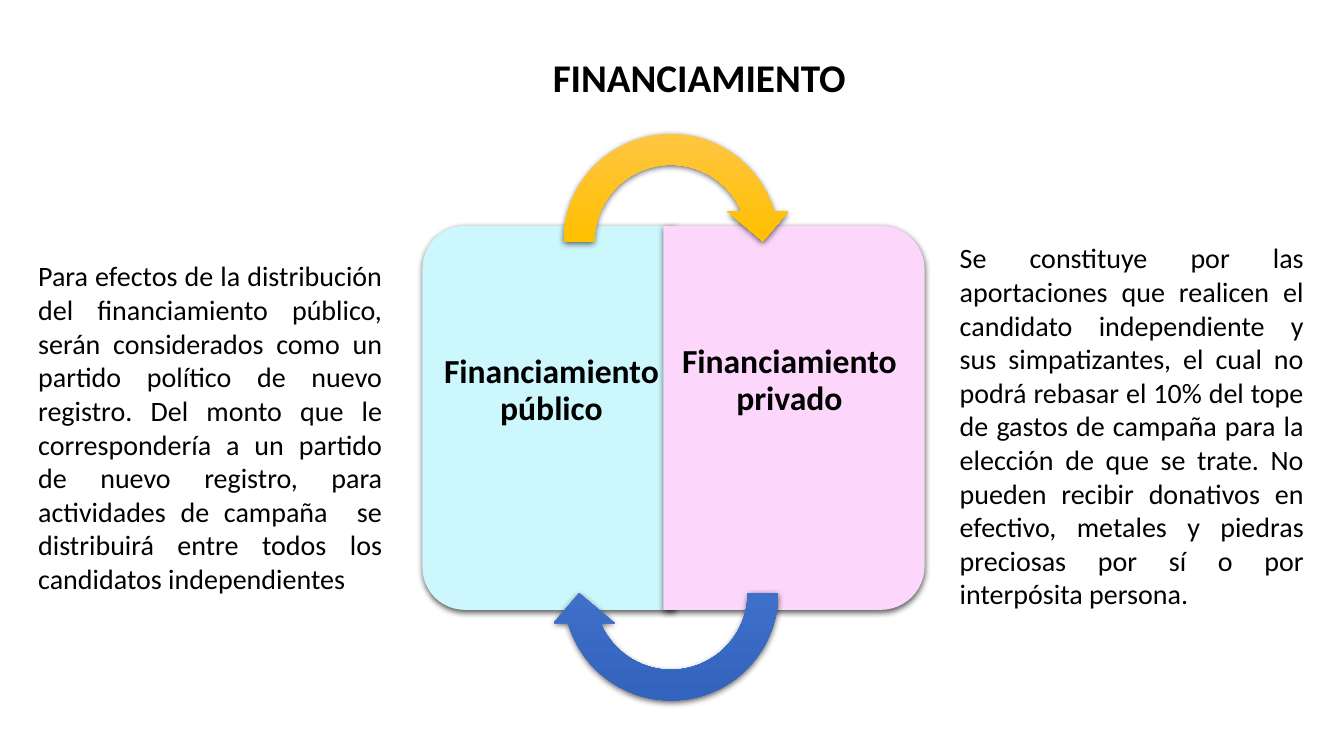
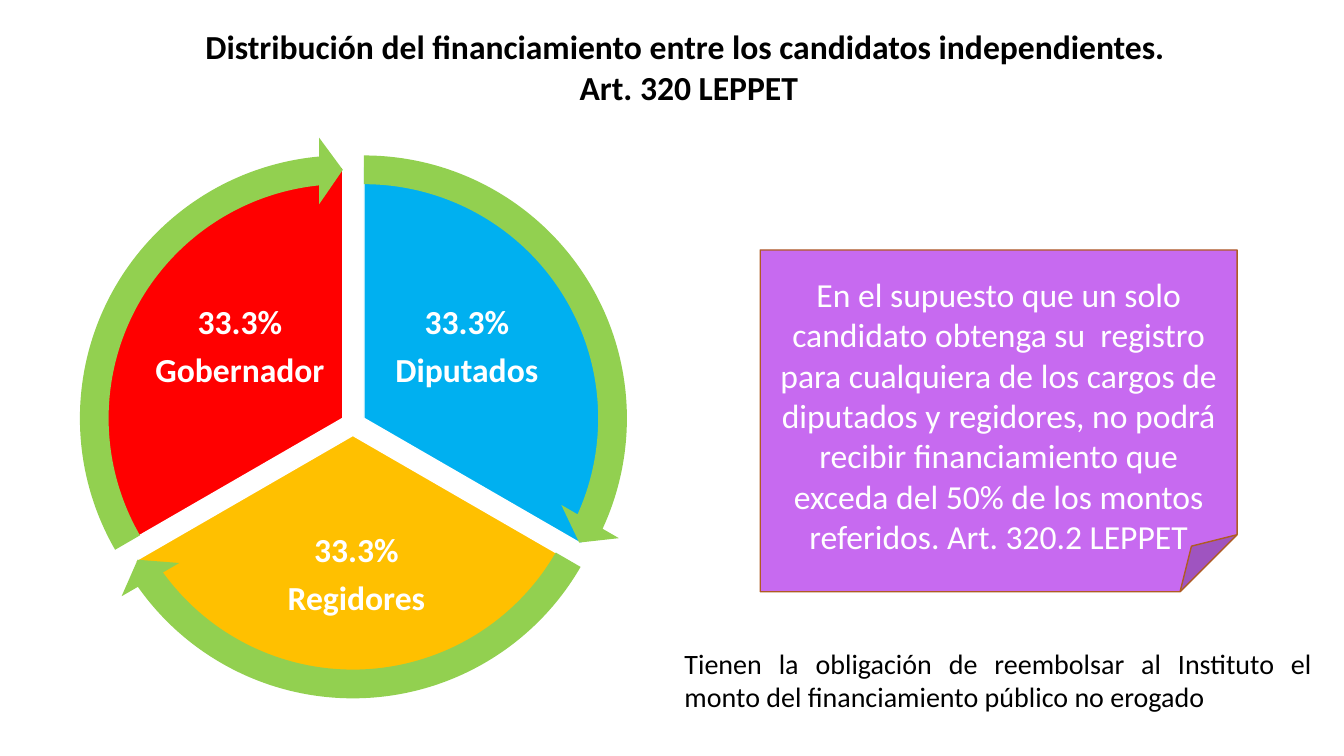
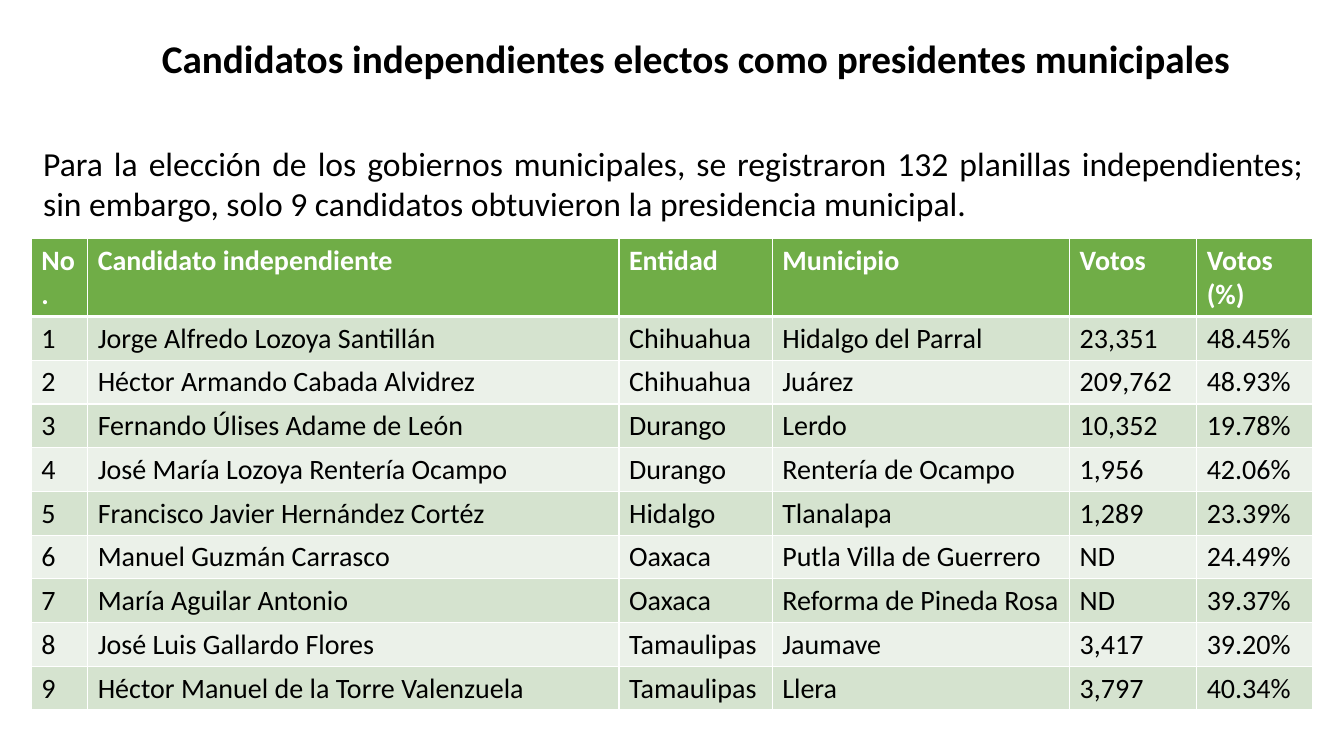
from dataclasses import dataclass

from lxml import etree
from pptx import Presentation
from pptx.dml.color import RGBColor
from pptx.enum.shapes import MSO_SHAPE
from pptx.enum.text import MSO_ANCHOR, MSO_AUTO_SIZE, PP_ALIGN
from pptx.oxml import parse_xml
from pptx.oxml.ns import qn
from pptx.util import Inches, Pt

CENTER, JUSTIFY, LEFT = PP_ALIGN.CENTER, PP_ALIGN.JUSTIFY, PP_ALIGN.LEFT
TOP, MIDDLE = MSO_ANCHOR.TOP, MSO_ANCHOR.MIDDLE
PIE, RING_ARROW = MSO_SHAPE.PIE, MSO_SHAPE.CIRCULAR_ARROW
CARD, NOTE = MSO_SHAPE.ROUND_2_SAME_RECTANGLE, MSO_SHAPE.FOLDED_CORNER
A_NS = 'xmlns:a="http://schemas.openxmlformats.org/drawingml/2006/main"'


@dataclass(frozen=True)
class Theme:
    font: str = "Calibri"
    black: str = "000000"
    white: str = "FFFFFF"
    cyan: str = "CBF7FD"
    pink: str = "FDD7FB"
    gold: tuple = ("FFC64B", "FFC000", "E3AB00")
    navy: tuple = ("6183CB", "3E70CA", "3062BB")
    blue: str = "00B0F0"
    amber: str = "FFC000"
    red: str = "FF0000"
    lime: str = "92D050"
    purple: str = "C76AF0"
    rust: str = "AF5C24"
    header: str = "70AD47"
    bands: tuple = ("D5E3CF", "EBF1E9")
    big: int = 28
    medium: int = 24
    body: int = 20


THEME = Theme()

# Content: frames are left, top, width, height in inches
FINANCING = {
    "title": (["FINANCIAMIENTO"], (3.62, 0.48, 6.63, 0.57), THEME.big),
    # frame before turning, rotation, fill, label, label frame
    "cards": [
        ((3.54, 2.89, 3.81, 2.51), 270, THEME.cyan, "Financiamiento público", (4.22, 3.38, 2.5, 1)),
        ((5.97, 2.85, 3.81, 2.59), 90, THEME.pink, "Financiamiento privado", (6.58, 3.28, 2.5, 1)),
    ],
    # top, rotation, gradient
    "arrows": [(1.18, 0, THEME.gold), (4.67, 180, THEME.navy)],
    "texts": [
        ("Para efectos de la distribución del financiamiento público, serán considerados "
         "como un partido político de nuevo registro. Del monto que le correspondería a un "
         "partido de nuevo registro, para actividades de campaña  se distribuirá entre todos "
         "los candidatos independientes", (0.28, 2.52, 3.61, 3.47)),
        ("Se constituye por las aportaciones que realicen el candidato independiente y sus "
         "simpatizantes, el cual no podrá rebasar el 10% del tope de gastos de campaña para "
         "la elección de que se trate. No pueden recibir donativos en efectivo, metales y "
         "piedras preciosas por sí o por interpósita persona.", (9.42, 2.34, 3.61, 3.8)),
    ],
}
DISTRIBUTION = {
    "title": (["Distribución del financiamiento entre los candidatos independientes.",
               " Art. 320 LEPPET"], (1.65, 0.21, 10.29, 0.91), THEME.medium),
    "share": "33.3%",
    # label, fill, left, top, start and end in degrees, label frame
    "sectors": [
        ("Diputados", THEME.blue, 1.12, 1.66, 270, 30, (3.74, 2.71, 1.78, 1.48)),
        ("Regidores", THEME.amber, 1.01, 1.83, 30, 150, (2.2, 5.06, 2.67, 1.3)),
        ("Gobernador", THEME.red, 0.91, 1.66, 150, 270, (1.49, 2.71, 1.78, 1.48)),
    ],
    "note": ("En el supuesto que un solo candidato obtenga su  registro para cualquiera de los "
             "cargos de diputados y regidores, no podrá recibir financiamiento que exceda del "
             "50% de los montos referidos. Art. 320.2 LEPPET", (7.54, 2.48, 4.73, 3.39)),
    "duty": ("Tienen la obligación de reembolsar al Instituto el monto del financiamiento "
             "público no erogado", (6.69, 6.36, 6.42, 0.77)),
}
ELECTED = {
    "title": (["Candidatos independientes electos como presidentes municipales"],
              (1.32, 0.29, 11.16, 0.57), THEME.big),
    "intro": ("Para la elección de los gobiernos municipales, se registraron 132 planillas "
              "independientes; sin embargo, solo 9 candidatos obtuvieron la presidencia "
              "municipal.", (0.33, 1.37, 12.7, 0.91)),
    "columns": [("No.", 0.56), ("Candidato independiente", 5.27), ("Entidad", 1.52),
                ("Municipio", 2.95), ("Votos", 1.26), ("Votos (%)", 1.15)],
    "rows": [
        ("Jorge Alfredo Lozoya Santillán", "Chihuahua", "Hidalgo del Parral", "23,351", "48.45%"),
        ("Héctor Armando Cabada Alvidrez", "Chihuahua", "Juárez", "209,762", "48.93%"),
        ("Fernando Úlises Adame de León", "Durango", "Lerdo", "10,352", "19.78%"),
        ("José María Lozoya Rentería Ocampo", "Durango", "Rentería de Ocampo", "1,956", "42.06%"),
        ("Francisco Javier Hernández Cortéz", "Hidalgo", "Tlanalapa", "1,289", "23.39%"),
        ("Manuel Guzmán Carrasco", "Oaxaca", "Putla Villa de Guerrero", "ND", "24.49%"),
        ("María Aguilar Antonio", "Oaxaca", "Reforma de Pineda Rosa", "ND", "39.37%"),
        ("José Luis Gallardo Flores", "Tamaulipas", "Jaumave", "3,417", "39.20%"),
        ("Héctor Manuel de la Torre Valenzuela", "Tamaulipas", "Llera", "3,797", "40.34%"),
    ],
}


# Shared helpers
def assign(target, **values):
    for name, value in values.items():
        setattr(target, name, value)


def inches(frame):
    return [Inches(value) for value in frame]


def write(text_frame, lines, size, color=THEME.black, bold=False, align=CENTER, **para_format):
    for index, line in enumerate(lines):
        para = text_frame.paragraphs[0] if index == 0 else text_frame.add_paragraph()
        assign(para, alignment=align, **para_format)
        span = para.add_run()
        span.text = line
        assign(span.font, name=THEME.font, size=Pt(size), bold=bold)
        span.font.color.rgb = RGBColor.from_string(color)


def add_title(page, lines, frame, size):
    title = page.shapes.title
    assign(title, **dict(zip(("left", "top", "width", "height"), inches(frame))))
    assign(title.text_frame, word_wrap=True, vertical_anchor=TOP,
           auto_size=MSO_AUTO_SIZE.SHAPE_TO_FIT_TEXT)
    write(title.text_frame, lines, size, bold=True)


def add_text(page, lines, frame, size, anchor=TOP, **text_format):
    box = page.shapes.add_textbox(*inches(frame))
    assign(box.text_frame, word_wrap=True, vertical_anchor=anchor)
    write(box.text_frame, lines, size, **text_format)
    return box


def add_label(page, lines, frame, color):
    box = add_text(page, lines, frame, THEME.medium, anchor=MIDDLE, color=color, bold=True,
                   line_spacing=0.9, space_after=Pt(8.4))
    margin = Inches(0.03)
    assign(box.text_frame, margin_left=margin, margin_right=margin,
           margin_top=margin, margin_bottom=margin)


def add_figure(page, kind, frame, fill=None, line=None, adjustments=(), rotation=0):
    figure = page.shapes.add_shape(kind, *inches(frame))
    figure.shadow.inherit = False
    figure.rotation = rotation
    for index, value in enumerate(adjustments):
        figure.adjustments[index] = value
    if fill:
        figure.fill.solid()
        figure.fill.fore_color.rgb = RGBColor.from_string(fill)
    if line:
        figure.line.color.rgb = RGBColor.from_string(line)
        figure.line.width = Pt(1)
    else:
        figure.line.fill.background()
    return figure


def angle(degrees):
    """Angle in the unit of shape adjustments (60000 per degree over 100000)."""
    return degrees * 0.6


def add_ring_arrow(page, frame, start, end, band, head, head_width, **look):
    values = (band, head, angle(end) - head, angle(start), head_width)
    return add_figure(page, RING_ARROW, frame, adjustments=values, **look)


def drop_shadow(figure):
    effects = figure._element.spPr.find(qn("a:effectLst"))
    effects.append(parse_xml(
        f'<a:outerShdw {A_NS} blurRad="{Pt(4.5)}" dist="{Pt(1.5)}" dir="5400000" '
        f'algn="ctr" rotWithShape="0"><a:srgbClr val="{THEME.black}">'
        '<a:alpha val="63000"/></a:srgbClr></a:outerShdw>'))


def fill_gradient(figure, colors):
    stops = "".join(f'<a:gs pos="{index * 50000}"><a:srgbClr val="{color}"/></a:gs>'
                    for index, color in enumerate(colors))
    figure._element.spPr.find(qn("a:prstGeom")).addnext(parse_xml(
        f'<a:gradFill {A_NS} rotWithShape="0"><a:gsLst>{stops}</a:gsLst>'
        '<a:lin ang="5400000" scaled="0"/></a:gradFill>'))


def set_borders(cell, top, bottom):
    properties = cell._tc.get_or_add_tcPr()
    for index, (side, width) in enumerate(zip("LRTB", (1, 1, top, bottom))):
        border = etree.Element(qn(f"a:ln{side}"), w=str(Pt(width)))
        paint = etree.SubElement(border, qn("a:solidFill"))
        etree.SubElement(paint, qn("a:srgbClr"), val=THEME.white)
        properties.insert(index, border)


# Slides
def build_financing(page):
    for frame, rotation, fill, label, label_frame in FINANCING["cards"]:
        card = add_figure(page, CARD, frame, fill, adjustments=(0.167, 0), rotation=rotation)
        drop_shadow(card)
        add_label(page, [label], label_frame, THEME.black)
    for top, rotation, colors in FINANCING["arrows"]:
        arrow = add_ring_arrow(page, (5.44, top, 2.43, 2.43), 180, 360, 0.125, 11.42, 0.125,
                               rotation=rotation)
        fill_gradient(arrow, colors)
        drop_shadow(arrow)
    for text, frame in FINANCING["texts"]:
        add_text(page, [text], frame, THEME.body, align=JUSTIFY)


def build_distribution(page):
    pie_size, ring_gap = 4.98, 0.305
    ring_size = pie_size + 2 * ring_gap
    sectors = DISTRIBUTION["sectors"]
    for label, fill, left, top, start, end, label_frame in sectors:
        add_figure(page, PIE, (left, top, pie_size, pie_size), fill, THEME.white,
                   (angle(start), angle(end)))
        add_label(page, [DISTRIBUTION["share"], label], label_frame, THEME.white)
    for _, _, left, top, start, end, _ in sectors:
        frame = (left - ring_gap, top - ring_gap, ring_size, ring_size)
        add_ring_arrow(page, frame, start, end, 0.051, 3.275, 0.059, fill=THEME.lime)

    text, frame = DISTRIBUTION["note"]
    note = add_figure(page, NOTE, frame, THEME.purple, THEME.rust)
    assign(note.text_frame, word_wrap=True, vertical_anchor=MIDDLE, margin_top=Inches(0.5))
    write(note.text_frame, [text], THEME.medium, THEME.white)

    text, frame = DISTRIBUTION["duty"]
    add_text(page, [text], frame, THEME.body, align=JUSTIFY)


def build_elected(page):
    text, frame = ELECTED["intro"]
    add_text(page, [text], frame, THEME.medium, align=JUSTIFY)

    columns = ELECTED["columns"]
    rows = [[name for name, _ in columns]]
    rows += [(str(number), *row) for number, row in enumerate(ELECTED["rows"], 1)]
    table = page.shapes.add_table(len(rows), len(columns),
                                  *inches((0.31, 2.37, 12.7, 4.67))).table
    for column, (_, width) in zip(table.columns, columns):
        column.width = Inches(width)
    for row_index, values in enumerate(rows):
        is_header = row_index == 0
        table.rows[row_index].height = Inches(0.77 if is_header else 0.43)
        fill = THEME.header if is_header else THEME.bands[(row_index - 1) % 2]
        for column_index, value in enumerate(values):
            cell = table.cell(row_index, column_index)
            cell.fill.solid()
            cell.fill.fore_color.rgb = RGBColor.from_string(fill)
            set_borders(cell, top=3 if row_index == 1 else 1, bottom=3 if is_header else 1)
            write(cell.text_frame, [value], THEME.body, align=LEFT, bold=is_header,
                  color=THEME.white if is_header else THEME.black)


def main():
    deck = Presentation()
    assign(deck, slide_width=Inches(13.33), slide_height=Inches(7.5))
    title_only = deck.slide_layouts[5]
    for content, build in ((FINANCING, build_financing),
                           (DISTRIBUTION, build_distribution),
                           (ELECTED, build_elected)):
        page = deck.slides.add_slide(title_only)
        add_title(page, *content["title"])
        build(page)
    deck.save("out.pptx")


if __name__ == "__main__":
    main()
